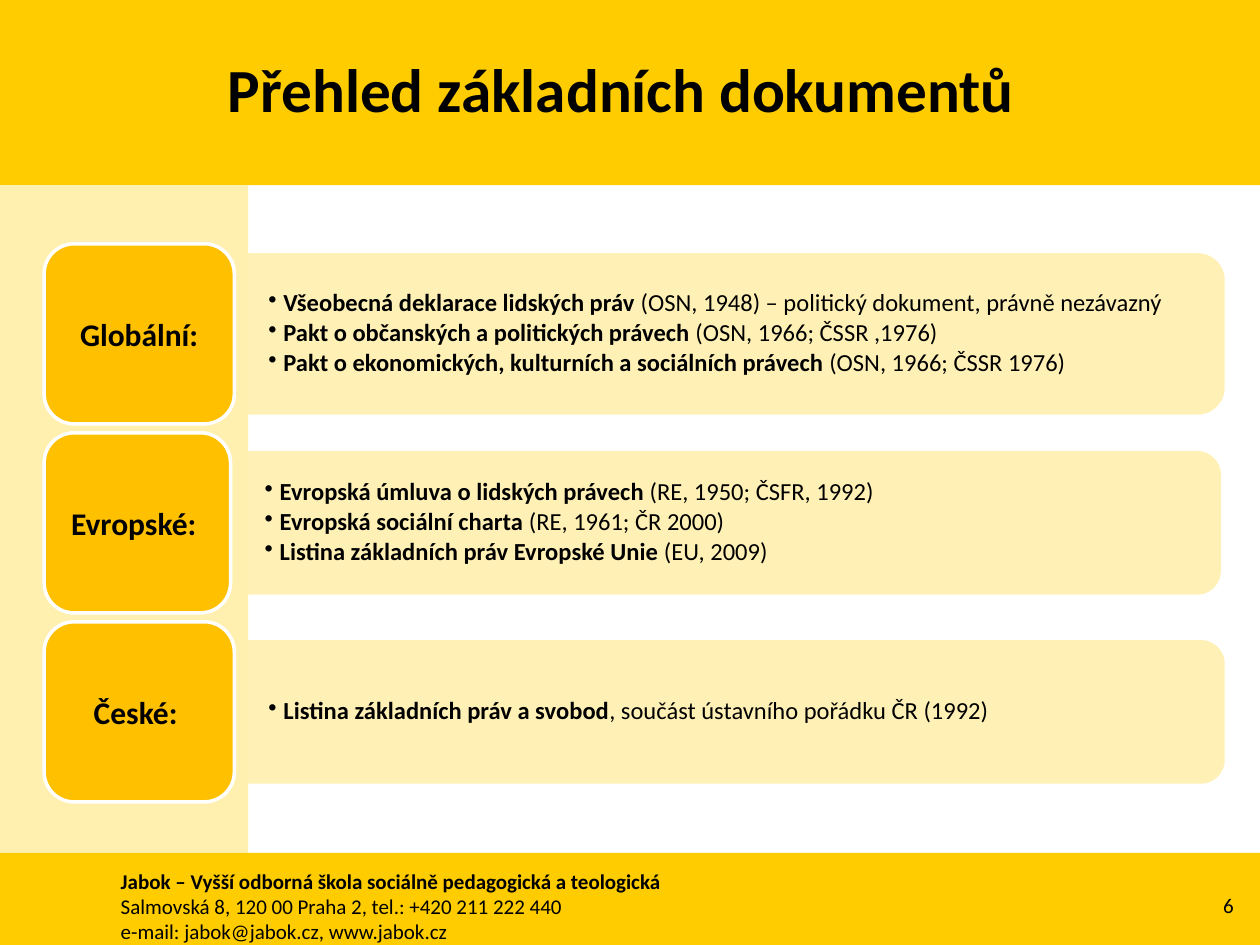
"""Build a slide listing global, European and Czech human rights documents."""
from lxml.etree import SubElement
from pptx import Presentation
from pptx.dml.color import RGBColor
from pptx.enum.shapes import MSO_SHAPE as Shape
from pptx.enum.text import MSO_ANCHOR as Anchor, PP_ALIGN as Align
from pptx.oxml.ns import qn
from pptx.util import Inches, Pt

TITLE = "Přehled základních dokumentů"
GROUPS = [
    ("Globální:", [
        ("Všeobecná deklarace lidských práv ", "(OSN, 1948) – politický dokument, právně nezávazný"),
        ("Pakt o občanských a politických právech ", "(OSN, 1966; ČSSR ,1976)"),
        ("Pakt o ekonomických, kulturních a sociálních právech ", "(OSN, 1966; ČSSR 1976)"),
    ]),
    ("Evropské: ", [
        ("Evropská úmluva o lidských právech ", "(RE, 1950; ČSFR, 1992)"),
        ("Evropská sociální charta ", "(RE, 1961; ČR 2000)"),
        ("Listina základních práv Evropské Unie ", "(EU, 2009)"),
    ]),
    ("České: ", [
        ("Listina základních práv a svobod", ", součást ústavního pořádku ČR (1992)"),
    ]),
]
FOOTER = [
    ("Jabok – Vyšší odborná škola sociálně pedagogická a teologická", ""),
    ("", "Salmovská 8, 120 00 Praha 2, tel.: +420 211 222 440"),
    ("", "e-mail: jabok@jabok.cz, www.jabok.cz"),
]
PAGE_NUMBER = "6"

COLORS = {"band": "FFCC00", "pale": "FFF0AF", "label": "FFC000", "white": "FFFFFF", "text": "000000"}
FONT = "Calibri"
WIDTH, HEIGHT = 10, 7.5
HEAD, FOOT, SIDE = 1.47, 6.77, 1.97
LABEL_LEFT, LABEL_HEIGHT = 0.35, 1.43
FIRST_CENTER, ROW_PITCH = 2.65, 1.5
PANEL_WIDTH = 7.86
LABEL_WIDTHS = [1.51, 1.48, 1.51]
PANEL_HEIGHTS = [1.28, 1.14, 1.14]


def color(name):
    return RGBColor.from_string(COLORS[name])


def add_block(page, kind, left, top, width, height, fill):
    block = page.shapes.add_shape(kind, *map(Inches, (left, top, width, height)))
    block.shadow.inherit = False
    block.fill.solid()
    block.fill.fore_color.rgb = color(fill)
    block.line.fill.background()
    return block


def add_bullet(para):
    props = para._p.get_or_add_pPr()
    props.set("marL", str(Inches(0.12)))
    props.set("indent", str(-Inches(0.12)))
    SubElement(props, qn("a:buChar"), char="•")
    para.line_spacing = 0.9
    para.space_after = Pt(2)


def write(box, lines, size, align=Align.LEFT, anchor=Anchor.MIDDLE, insets=(0.1, 0.05), bullets=False):
    frame = box.text_frame
    frame.word_wrap = True
    frame.vertical_anchor = anchor
    frame.margin_left = frame.margin_right = Inches(insets[0])
    frame.margin_top = frame.margin_bottom = Inches(insets[1])
    for index, parts in enumerate(lines):
        para = frame.add_paragraph() if index else frame.paragraphs[0]
        para.alignment = align
        if bullets:
            add_bullet(para)
        para.font.name, para.font.size = FONT, Pt(size)
        para.font.color.rgb = color("text")
        for text, bold in zip(parts, (True, False)):
            if text:
                span = para.add_run()
                span.text, span.font.bold = text, bold


def add_text(page, left, top, width, height, lines, size, **style):
    box = page.shapes.add_textbox(*map(Inches, (left, top, width, height)))
    write(box, lines, size, **style)


def add_group(page, row, label, documents):
    center = FIRST_CENTER + row * ROW_PITCH
    label_width, panel_height = LABEL_WIDTHS[row], PANEL_HEIGHTS[row]
    left = LABEL_LEFT + label_width
    panel = add_block(page, Shape.ROUND_2_SAME_RECTANGLE, left + (PANEL_WIDTH - panel_height) / 2,
                      center - PANEL_WIDTH / 2, panel_height, PANEL_WIDTH, "pale")
    panel.rotation = 90
    SubElement(panel.fill._xPr.find(qn("a:solidFill"))[0], qn("a:alpha"), val="90000")
    add_text(page, left, center - panel_height / 2, PANEL_WIDTH, panel_height, documents, 14,
             insets=(0.27, 0.14), bullets=True)
    tile = add_block(page, Shape.ROUNDED_RECTANGLE, LABEL_LEFT, center - LABEL_HEIGHT / 2,
                     label_width, LABEL_HEIGHT, "label")
    tile.line.color.rgb = color("white")
    tile.line.width = Pt(2)
    write(tile, [(label, "")], 18, align=Align.CENTER, insets=(0.07, 0.04))


def main():
    deck = Presentation()
    deck.slide_width, deck.slide_height = Inches(WIDTH), Inches(HEIGHT)
    page = deck.slides.add_slide(deck.slide_layouts[6])
    add_block(page, Shape.RECTANGLE, 0, 0, WIDTH, HEAD, "band")
    add_block(page, Shape.RECTANGLE, 0, HEAD, SIDE, HEIGHT - HEAD, "pale")
    add_block(page, Shape.RECTANGLE, 0, FOOT, WIDTH, HEIGHT - FOOT, "band")
    add_text(page, 0.86, 6.84, 8.19, 0.71, FOOTER, 12, anchor=Anchor.TOP)
    add_text(page, 9.26, 6.98, 0.63, 0.4, [("", PAGE_NUMBER)], 12, align=Align.RIGHT)
    add_text(page, 0.43, 0.44, 9, 0.52, [(TITLE, "")], 35, align=Align.CENTER)
    for row, (label, documents) in enumerate(GROUPS):
        add_group(page, row, label, documents)
    deck.save("out.pptx")


if __name__ == "__main__":
    main()
